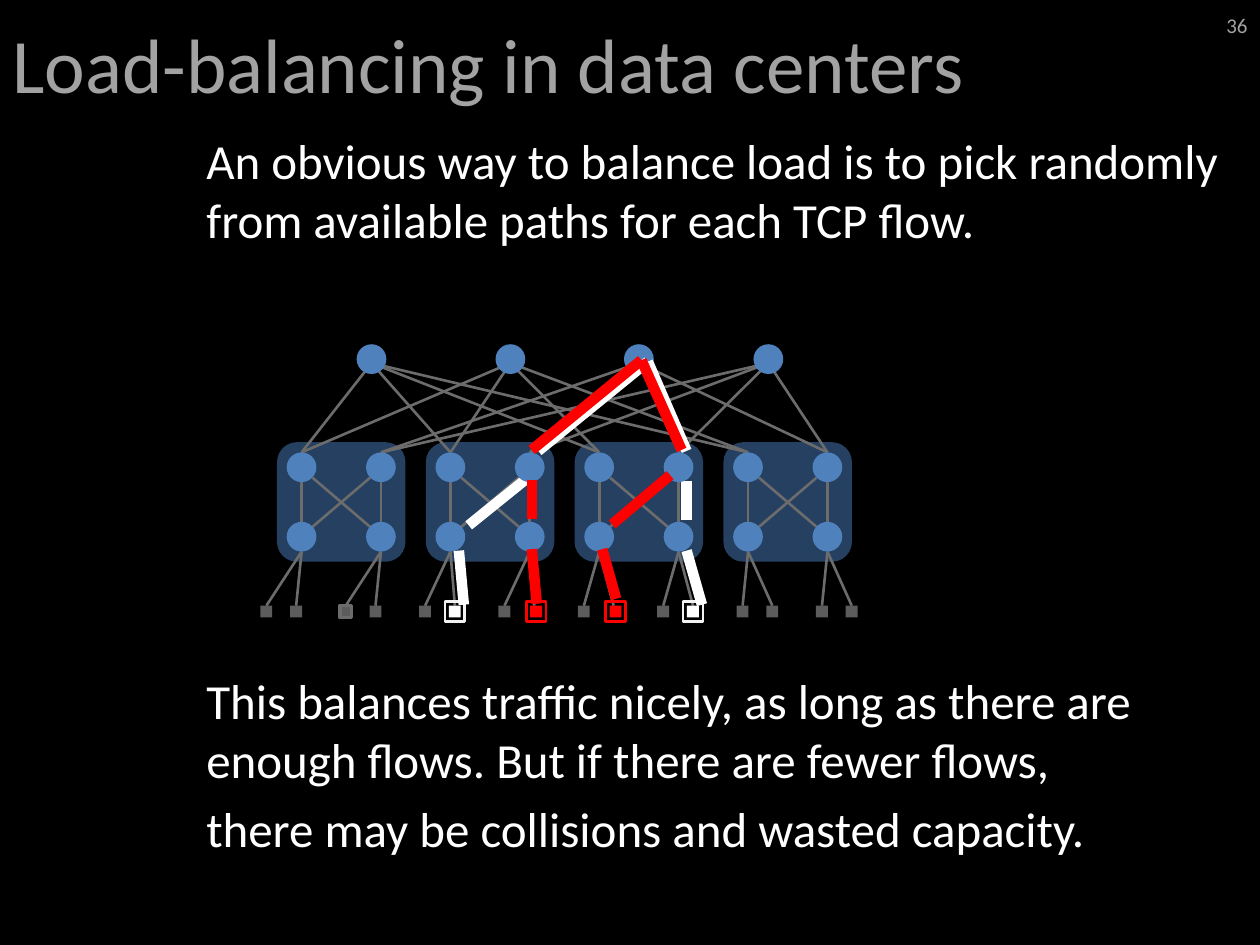
from itertools import product

from pptx import Presentation
from pptx.dml.color import RGBColor
from pptx.enum.shapes import MSO_CONNECTOR, MSO_SHAPE
from pptx.enum.text import MSO_ANCHOR, PP_ALIGN
from pptx.oxml.ns import qn
from pptx.util import Cm, Pt
from lxml.etree import SubElement

GREY, DARK, WIRE = "A2A2A2", "5C5C5C", "6C6C6C"
WHITE, OFFWHITE, RED = "FFFFFF", "F2F2F2", "FF0000"
BLUE, NAVY, BLACK = "4F81BD", "254061", "000000"

CORE_X = (7.49, 10.29, 12.88, 15.49)
CORE_Y, AGG_Y, EDGE_Y, SERVER_Y = 7.24, 9.42, 10.82, 12.33
NODE, SERVER, RING = 0.6, 0.24, 0.4
RADIUS = NODE / 2
PODS, SIDES = range(4), range(2)

WHITE_PATH = [
    (13.84, 9.09, 13.06, 7.29),
    (9.35, 12.19, 9.25, 11.1),
    (14.15, 12.19, 13.84, 11.1),
    (9.45, 10.59, 10.64, 9.63),
    (13.84, 10.49, 13.84, 9.7),
    (10.85, 9.09, 13.06, 7.29),
]
RED_PATH = [
    (12.42, 12.07, 12.14, 11.07),
    (12.34, 10.57, 13.51, 9.58),
    (13.74, 9.07, 12.93, 7.26),
    (10.82, 12.17, 10.72, 11.07),
    (10.72, 10.46, 10.72, 9.68),
    (10.72, 9.07, 12.93, 7.26),
]


def colour(value):
    return RGBColor.from_string(value)


def switch_x(pod, side):
    return 6.08 + 3 * pod + 1.6 * side


def server_x(pod, side, port):
    return 5.37 + 3.2 * pod + 1.6 * side + 0.6 * port


class Board:
    font = "Calibri"

    def __init__(self, slide):
        self.slide = slide
        slide.background.fill.solid()
        slide.background.fill.fore_color.rgb = colour(BLACK)

    def text(self, box, paragraphs, size, ink, anchor=MSO_ANCHOR.TOP,
             align=PP_ALIGN.LEFT, before=0):
        frame = self.slide.shapes.add_textbox(*map(Cm, box)).text_frame
        frame.word_wrap = True
        frame.vertical_anchor = anchor
        frame.text = "\n".join(paragraphs)
        for paragraph in frame.paragraphs:
            paragraph.alignment = align
            paragraph.space_before = Pt(before)
            paragraph.font.name = self.font
            paragraph.font.size = Pt(size)
            paragraph.font.color.rgb = colour(ink)

    def shape(self, kind, x, y, width, height, fill=None, line=None, weight=1.5):
        shape = self.slide.shapes.add_shape(
            kind, Cm(x - width / 2), Cm(y - height / 2), Cm(width), Cm(height))
        shape.shadow.inherit = False
        if fill:
            shape.fill.solid()
            shape.fill.fore_color.rgb = colour(fill)
        else:
            shape.fill.background()
        if line:
            shape.line.color.rgb = colour(line)
            shape.line.width = Pt(weight)
        else:
            shape.line.fill.background()

    def node(self, x, y):
        self.shape(MSO_SHAPE.OVAL, x, y, NODE, NODE, BLUE)

    def server(self, x, fill, line=None):
        self.shape(MSO_SHAPE.RECTANGLE, x, SERVER_Y, SERVER, SERVER, fill, line, 2)

    def ring(self, x, ink):
        self.shape(MSO_SHAPE.RECTANGLE, x, SERVER_Y, RING, RING, line=ink)

    def wire(self, x1, y1, x2, y2, ink=WIRE, weight=1.5):
        wire = self.slide.shapes.add_connector(
            MSO_CONNECTOR.STRAIGHT, Cm(x1), Cm(y1), Cm(x2), Cm(y2))
        wire.line.color.rgb = colour(ink)
        wire.line.width = Pt(weight)
        SubElement(wire._element.spPr, qn("a:effectLst"))

    def flow(self, segments, ink):
        for segment in segments:
            self.wire(*segment, ink, 6)


def draw_wires(board):
    for pod, side in product(PODS, SIDES):
        x = switch_x(pod, side)
        board.wire(x, EDGE_Y - RADIUS, x, AGG_Y + RADIUS)
        inward = 0.22 if side == 0 else -0.22
        board.wire(x + inward, AGG_Y + 0.21,
                   switch_x(pod, 1 - side) - inward, EDGE_Y - 0.2)
        for port in SIDES:
            board.wire(x, AGG_Y - RADIUS, CORE_X[2 * side + port], CORE_Y + 0.08)
            board.wire(server_x(pod, side, port), SERVER_Y - SERVER / 2,
                       x, EDGE_Y + RADIUS)


def draw_servers(board):
    white_servers = {(1, 0, 1), (2, 1, 1)}
    red_servers = {(1, 1, 1), (2, 0, 1)}
    outlined_server = (0, 1, 0)
    for place in product(PODS, SIDES, SIDES):
        if place not in red_servers:
            board.server(server_x(*place),
                         WHITE if place in white_servers else DARK,
                         WIRE if place == outlined_server else None)
    for place in sorted(white_servers):
        board.ring(server_x(*place), OFFWHITE)
    return [server_x(*place) + 0.04 for place in sorted(red_servers)]


def main():
    deck = Presentation()
    deck.slide_width, deck.slide_height = Cm(25.4), Cm(19.05)
    board = Board(deck.slides.add_slide(deck.slide_layouts[6]))

    for pod in PODS:
        board.shape(MSO_SHAPE.ROUNDED_RECTANGLE, 6.88 + 3 * pod, 10.12, 2.59, 2.41, NAVY)

    board.text((0, 0, 25.4, 2.51), ["Load-balancing in data centers"],
               44, GREY, MSO_ANCHOR.MIDDLE)
    board.text((3.91, 2.51, 21.49, 3), [
        "An obvious way to balance load is to pick randomly from available "
        "paths for each TCP flow."], 28, WHITE, before=5.6)
    board.text((3.91, 13.4, 21.49, 4.5), [
        "This balances traffic nicely, as long as there are enough flows. "
        "But if there are fewer flows,",
        "there may be collisions and wasted capacity."], 28, WHITE, before=5.6)
    board.text((23.29, 0, 2.11, 1.02), ["36"], 12, GREY,
               MSO_ANCHOR.MIDDLE, PP_ALIGN.RIGHT)

    draw_wires(board)
    for place in product(PODS, SIDES):
        board.node(switch_x(*place), EDGE_Y)
    red_x = draw_servers(board)
    for x in CORE_X:
        board.node(x, CORE_Y)
    board.flow(WHITE_PATH, WHITE)
    for place in product(PODS, SIDES):
        board.node(switch_x(*place), AGG_Y)

    for x in red_x:
        board.server(x, RED)
    board.flow(RED_PATH, RED)
    for x in red_x:
        board.ring(x, RED)

    deck.save("out.pptx")


if __name__ == "__main__":
    main()
